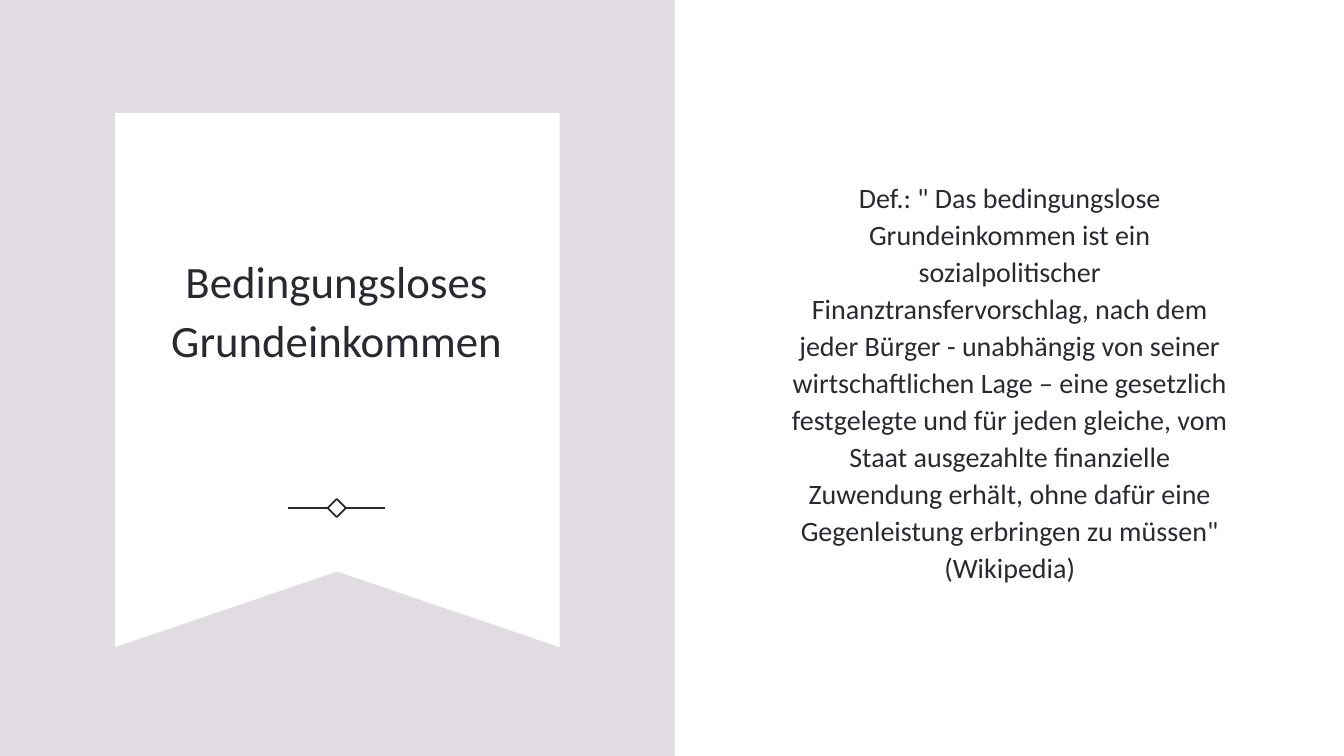
from lxml.etree import SubElement
from pptx import Presentation
from pptx.dml.color import RGBColor
from pptx.enum.shapes import MSO_CONNECTOR as CONNECTOR, MSO_SHAPE as SHAPE
from pptx.enum.text import MSO_ANCHOR as ANCHOR, MSO_AUTO_SIZE as AUTO_SIZE, PP_ALIGN as ALIGN
from pptx.oxml.ns import qn
from pptx.util import Inches, Pt

COLORS = {"panel": "E0DCE1", "ribbon": "FFFFFF", "ink": "2C2830"}
FONT = "Calibri"
TITLE = "Bedingungsloses Grundeinkommen"
DEFINITION = (
    'Def.: " Das bedingungslose Grundeinkommen ist ein sozialpolitischer '
    "Finanztransfervorschlag, nach dem jeder Bürger - unabhängig von seiner "
    "wirtschaftlichen Lage – eine gesetzlich festgelegte und für jeden gleiche, "
    "vom Staat ausgezahlte finanzielle Zuwendung erhält, ohne dafür eine "
    'Gegenleistung erbringen zu müssen" (Wikipedia)'
)


def color(name):
    """Return the named palette colour."""
    return RGBColor.from_string(COLORS[name])


def fill_plain(shape, name):
    """Give a shape a solid fill without line or shadow."""
    shape.shadow.inherit = False
    shape.fill.solid()
    shape.fill.fore_color.rgb = color(name)
    shape.line.fill.background()


def draw_line(line):
    """Style an outline or connector in ink."""
    line.color.rgb = color("ink")
    line.width = Pt(1.25)


def add_panel(slide, width, height):
    """Add the tinted panel on the left."""
    panel = slide.shapes.add_shape(SHAPE.RECTANGLE, 0, 0, Inches(width), Inches(height))
    fill_plain(panel, "panel")


def add_ribbon(slide, left, top, right, bottom, notch):
    """Add the banner with its notched lower edge."""
    center = (left + right) / 2
    builder = slide.shapes.build_freeform(Inches(left), Inches(top))
    corners = [(right, top), (right, bottom), (center, notch), (left, bottom)]
    builder.add_line_segments([(Inches(x), Inches(y)) for x, y in corners], close=True)
    fill_plain(builder.convert_to_shape(), "ribbon")


def add_ornament(slide, center, middle, size, reach):
    """Add an outlined diamond with a line joined to either side."""
    diamond = slide.shapes.add_shape(
        SHAPE.DIAMOND, Inches(center - size / 2), Inches(middle - size / 2), Inches(size), Inches(size)
    )
    diamond.shadow.inherit = False
    diamond.fill.background()
    draw_line(diamond.line)
    for site, end in ((1, center - reach), (3, center + reach)):
        connector = slide.shapes.add_connector(
            CONNECTOR.STRAIGHT, Inches(center), Inches(middle), Inches(end), Inches(middle)
        )
        connector.begin_connect(diamond, site)
        draw_line(connector.line)
        SubElement(connector._element.spPr, qn("a:effectLst"))


def set_text(shape, text, size, left, top, width, height):
    """Place a text shape and fill it with one centred paragraph."""
    shape.left, shape.top = Inches(left), Inches(top)
    shape.width, shape.height = Inches(width), Inches(height)
    frame = shape.text_frame
    frame.text = text
    frame.word_wrap = True
    frame.auto_size = AUTO_SIZE.NONE
    frame.vertical_anchor = ANCHOR.MIDDLE
    paragraph = frame.paragraphs[0]
    paragraph.alignment = ALIGN.CENTER
    paragraph.line_spacing = 1.1
    paragraph.space_before = Pt(0)
    font = paragraph.runs[0].font
    font.name, font.size = FONT, Pt(size)
    font.color.rgb = color("ink")


def main():
    """Build and save the slide."""
    presentation = Presentation()
    presentation.slide_width, presentation.slide_height = Inches(13.33), Inches(7.5)
    slide = presentation.slides.add_slide(presentation.slide_layouts[5])
    add_panel(slide, 6.69, 7.5)
    add_ribbon(slide, 1.14, 1.12, 5.55, 6.42, 5.67)
    add_ornament(slide, 3.34, 5.04, 0.18, 0.48)
    title = slide.shapes.title
    set_text(title, TITLE, 32, 1.5, 1.48, 3.68, 3.14)
    slide.shapes._spTree.append(title._element)
    definition = slide.shapes.add_textbox(0, 0, 0, 0)
    set_text(definition, DEFINITION, 20, 7.66, 0.97, 4.71, 5.61)
    presentation.save("out.pptx")


if __name__ == "__main__":
    main()
